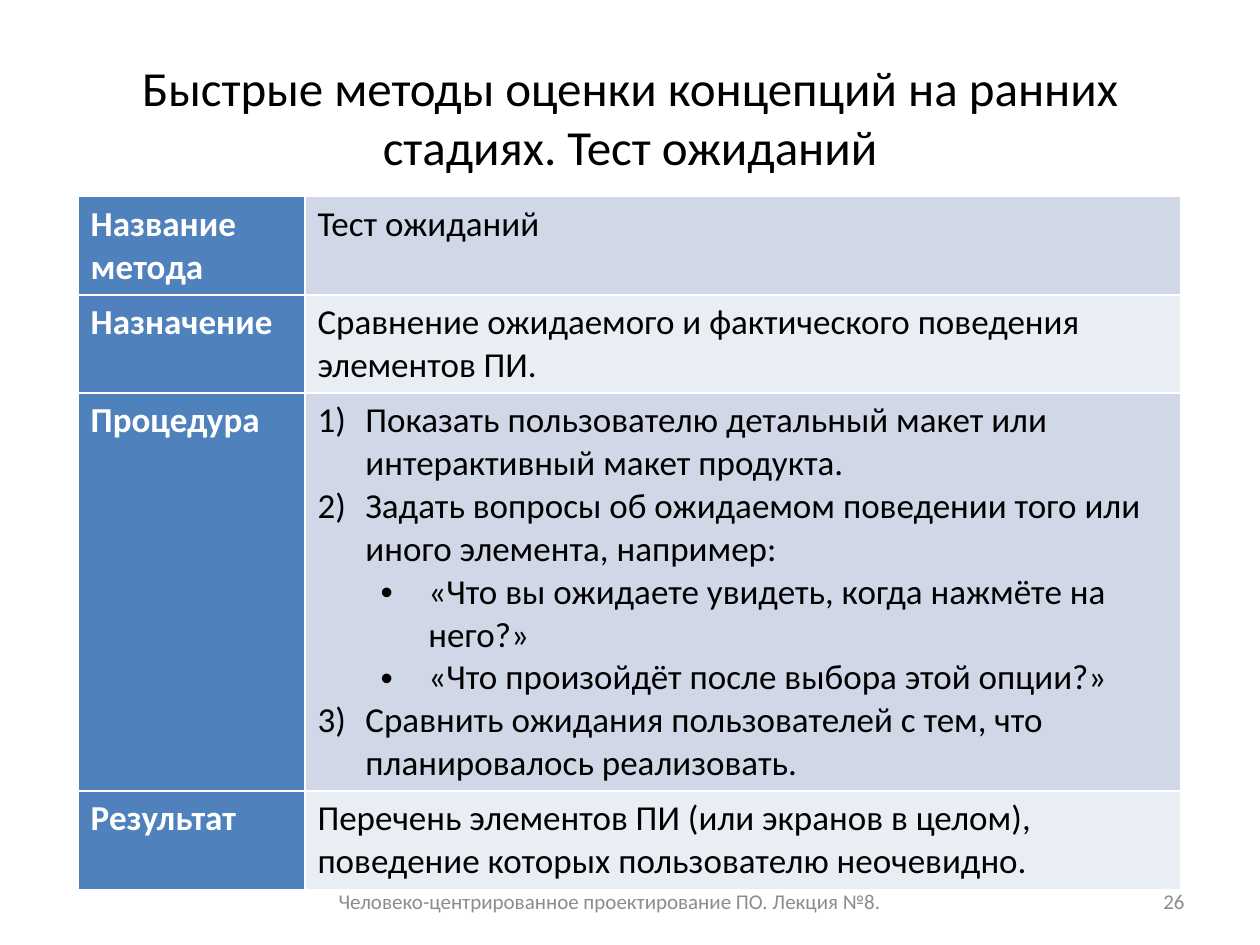
from lxml.etree import SubElement
from pptx import Presentation
from pptx.dml.color import RGBColor
from pptx.enum.text import MSO_ANCHOR as Anchor, PP_ALIGN as Align
from pptx.oxml.ns import qn
from pptx.util import Inches, Pt

COLORS = {"text": "000000", "footer": "8C8C8C", "header": "4F81BD", "white": "FFFFFF",
          "odd": "D0D8E8", "even": "E9EDF4"}
FONT = "Calibri"
WIDTH, HEIGHT = Inches(10), Inches(7.5)
COLUMNS = (1.8, 6.95)
TEXT_ROW, PROCEDURE_ROW = 0.78, 3.16
INDENT, LEVEL_STEP = 0.38, 0.5
NUMBER, BULLET = "number", "bullet"
ROWS = [
    ("Название метода", TEXT_ROW, [("Тест ожиданий", None)]),
    ("Назначение", TEXT_ROW,
     [("Сравнение ожидаемого и фактического поведения элементов ПИ.", None)]),
    ("Процедура", PROCEDURE_ROW, [
        ("Показать пользователю детальный макет или интерактивный макет продукта.", NUMBER),
        ("Задать вопросы об ожидаемом поведении того или иного элемента, например:", NUMBER),
        ("«Что вы ожидаете увидеть, когда нажмёте на него?»", BULLET),
        ("«Что произойдёт после выбора этой опции?»", BULLET),
        ("Сравнить ожидания пользователей с тем, что планировалось реализовать.", NUMBER),
    ]),
    ("Результат", TEXT_ROW,
     [("Перечень элементов ПИ (или экранов в целом), поведение которых "
       "пользователю неочевидно.", None)]),
]


def color(name):
    return RGBColor.from_string(COLORS[name])


def add_run(paragraph, text, size, color_name, bold=False):
    run = paragraph.add_run()
    run.text = text
    run.font.name, run.font.size, run.font.bold = FONT, Pt(size), bold
    run.font.color.rgb = color(color_name)


def set_marker(paragraph, marker):
    level = 1 if marker == BULLET else 0
    paragraph.level = level
    properties = paragraph._p.get_or_add_pPr()
    properties.set("marL", str(Inches(INDENT + level * LEVEL_STEP)))
    properties.set("indent", str(-Inches(INDENT)))
    if marker == NUMBER:
        SubElement(properties, qn("a:buFont"), typeface="+mj-lt")
        SubElement(properties, qn("a:buAutoNum"), type="arabicParenR")
    else:
        SubElement(properties, qn("a:buFont"), typeface="Arial")
        SubElement(properties, qn("a:buChar"), char="•")


def set_borders(cell):
    properties = cell._tc.get_or_add_tcPr()
    for position, side in enumerate(("lnL", "lnR", "lnT", "lnB")):
        line = properties.makeelement(qn(f"a:{side}"), {"w": str(Pt(1))})
        fill = SubElement(line, qn("a:solidFill"))
        SubElement(fill, qn("a:srgbClr"), val=COLORS["white"])
        properties.insert(position, line)


def fill_cell(cell, items, fill_name, color_name, bold=False):
    cell.fill.solid()
    cell.fill.fore_color.rgb = color(fill_name)
    set_borders(cell)
    frame = cell.text_frame
    for index, (text, marker) in enumerate(items):
        paragraph = frame.add_paragraph() if index else frame.paragraphs[0]
        if marker:
            set_marker(paragraph, marker)
        add_run(paragraph, text, 20, color_name, bold)


def add_title(slide, text):
    title = slide.shapes.title
    title.left, title.top = int(WIDTH * 0.05), int(HEIGHT * 0.04)
    title.width, title.height = int(WIDTH * 0.9), Inches(1.25)
    frame = title.text_frame
    frame.word_wrap, frame.vertical_anchor = True, Anchor.MIDDLE
    paragraph = frame.paragraphs[0]
    paragraph.alignment = Align.CENTER
    add_run(paragraph, text, 28, "text")


def add_footer(slide, text, left, width, alignment):
    box = slide.shapes.add_textbox(Inches(left), Inches(6.95), Inches(width), Inches(0.4))
    frame = box.text_frame
    frame.word_wrap, frame.vertical_anchor = True, Anchor.MIDDLE
    paragraph = frame.paragraphs[0]
    paragraph.alignment = alignment
    add_run(paragraph, text, 12, "footer")


def add_method_table(slide):
    height = sum(row[1] for row in ROWS)
    table = slide.shapes.add_table(len(ROWS), len(COLUMNS), Inches(0.62), Inches(1.56),
                                   Inches(sum(COLUMNS)), Inches(height)).table
    table.first_row = table.horz_banding = False
    for column, width in zip(table.columns, COLUMNS):
        column.width = Inches(width)
    for index, (heading, row_height, items) in enumerate(ROWS):
        table.rows[index].height = Inches(row_height)
        fill_cell(table.cell(index, 0), [(heading, None)], "header", "white", True)
        fill_cell(table.cell(index, 1), items, "even" if index % 2 else "odd", "text")


def main():
    """Build the slide about the expectation test and save it."""
    presentation = Presentation()
    presentation.slide_width, presentation.slide_height = WIDTH, HEIGHT
    slide = presentation.slides.add_slide(presentation.slide_layouts[5])
    add_title(slide, "Быстрые методы оценки концепций на ранних стадиях. Тест ожиданий")
    add_footer(slide, "Человеко-центрированное проектирование ПО. Лекция №8.",
               2.42, 4.84, Align.CENTER)
    add_footer(slide, "26", 7.17, 2.33, Align.RIGHT)
    add_method_table(slide)
    presentation.save("out.pptx")


if __name__ == "__main__":
    main()
